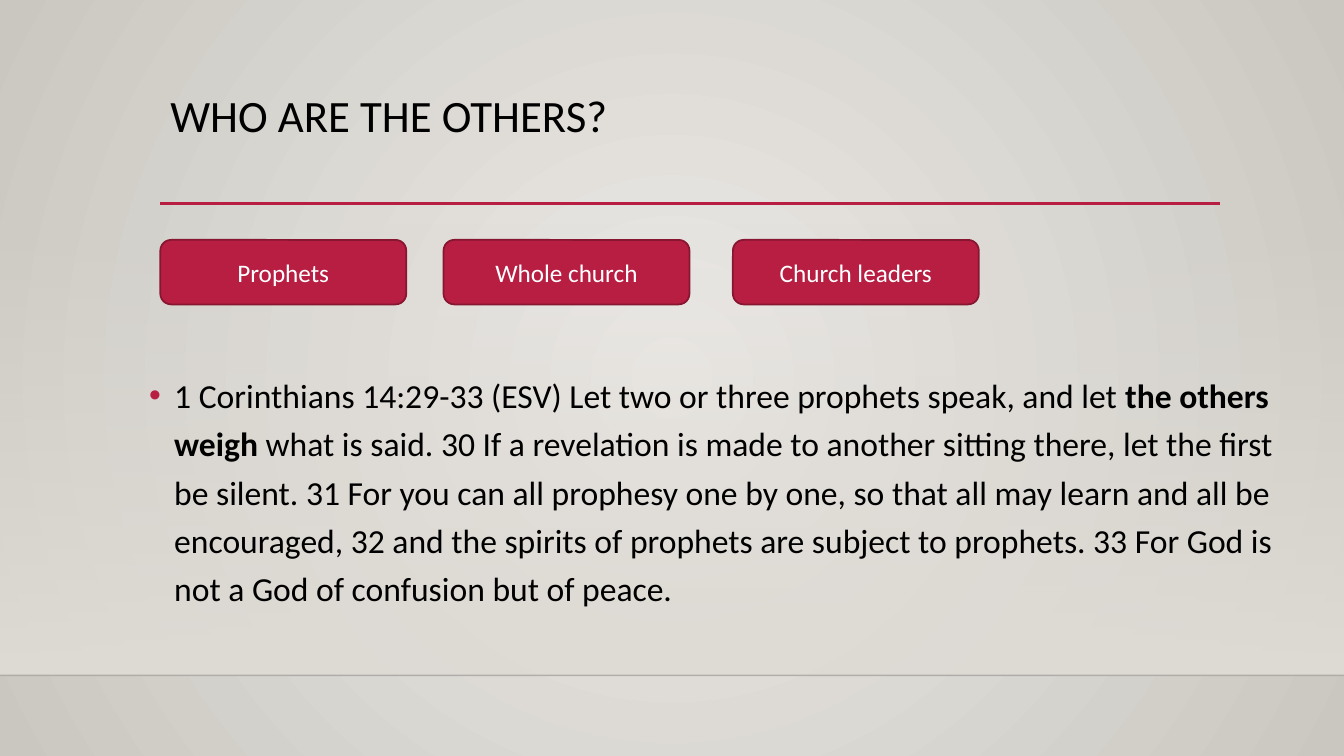
from lxml import etree
from pptx import Presentation
from pptx.dml.color import RGBColor
from pptx.enum.shapes import MSO_CONNECTOR, MSO_SHAPE
from pptx.enum.text import MSO_ANCHOR, MSO_AUTO_SIZE, PP_ALIGN
from pptx.oxml.ns import qn
from pptx.util import Inches, Pt

STRAIGHT = MSO_CONNECTOR.STRAIGHT
RECT, ROUND = MSO_SHAPE.RECTANGLE, MSO_SHAPE.ROUNDED_RECTANGLE
TOP, MIDDLE = MSO_ANCHOR.TOP, MSO_ANCHOR.MIDDLE
LEFT, CENTER = PP_ALIGN.LEFT, PP_ALIGN.CENTER
FIXED = MSO_AUTO_SIZE.NONE

RED = RGBColor(0xB7, 0x1E, 0x42)
WINE = RGBColor(0x87, 0x16, 0x31)
PALE = RGBColor(0xEC, 0xEA, 0xE7)
STONE = RGBColor(0xCA, 0xC7, 0xC1)
SAND = RGBColor(0xDF, 0xDB, 0xD5)
INK = RGBColor(0, 0, 1)
BLACK = RGBColor(0, 0, 0)
WHITE = RGBColor(255, 255, 255)

MARGIN = 11.93
FLOOR = 89.33
CHIPS = [(MARGIN, "Prophets"), (33, "Whole church"), (54.53, "Church leaders")]
VERSE = [
    ("1 Corinthians 14:29-33 (ESV) Let two or three prophets speak, and let ", False),
    ("the others weigh ", True),
    ("what is said. 30 If a revelation is made to another sitting there, let the "
     "first be silent. 31 For you can all prophesy one by one, so that all may learn "
     "and all be encouraged, 32 and the spirits of prophets are subject to prophets. "
     "33 For God is not a God of confusion but of peace.", False),
]


def add(parent, tag, **attrs):
    return etree.SubElement(parent, qn(tag), attrs)


def fade(color, share):
    """Set the opacity, in percent, of an srgbClr element."""
    add(color, "a:alpha", val=str(share * 1000))


class Deck:
    """One slide with its style; lengths are percent of the slide's size."""

    font = "Calibri"

    def __init__(self):
        self.prs = Presentation()
        self.prs.slide_width = Inches(13.333)
        self.prs.slide_height = Inches(7.5)
        self.slide = self.prs.slides.add_slide(self.prs.slide_layouts[5])
        self.shapes = self.slide.shapes

    def scale(self, x, y):
        return (round(self.prs.slide_width * x / 100),
                round(self.prs.slide_height * y / 100))

    def box(self, x, y, w, h):
        return *self.scale(x, y), *self.scale(w, h)

    def blend(self, fill, colors):
        fill.gradient()
        for stop, color in zip(fill.gradient_stops, colors):
            stop.color.rgb = color

    def backdrop(self, inner, outer):
        """Fill the background with a gradient running out from the centre."""
        fill = self.slide.background.fill
        self.blend(fill, (inner, outer))
        grad = next(self.slide.element.iter(qn("a:gradFill")))
        grad.remove(grad.find(qn("a:lin")))
        ring = add(grad, "a:path", path="circle")
        add(ring, "a:fillToRect", l="50000", t="50000", r="50000", b="50000")

    def haze(self, x, y, w, h, color):
        """Draw a panel that fades in from top to bottom."""
        panel = self.shapes.add_shape(RECT, *self.box(x, y, w, h))
        panel.shadow.inherit = False
        panel.line.fill.background()
        self.blend(panel.fill, (color, color))
        panel.fill.gradient_angle = 270
        fade(next(panel.element.iter(qn("a:srgbClr"))), 0)

    def rule(self, x, y, w, color, width, share=100):
        line = self.shapes.add_connector(
            STRAIGHT, *self.scale(x, y), *self.scale(x + w, y))
        line.line.color.rgb = color
        line.line.width = Pt(width)
        if share < 100:
            fade(next(line.element.iter(qn("a:srgbClr"))), share)
        add(line.element.spPr, "a:effectLst")

    def style(self, para, size, color, align=LEFT, lead=1.0):
        para.alignment = align
        para.line_spacing = lead
        para.font.name = self.font
        para.font.size = Pt(size)
        para.font.color.rgb = color

    def title(self, text, x, y, w, h):
        head = self.shapes.title
        head.left, head.top, head.width, head.height = self.box(x, y, w, h)
        frame = head.text_frame
        frame.text = text
        frame.auto_size = FIXED
        frame.vertical_anchor = TOP
        self.style(frame.paragraphs[0], 32, BLACK, lead=0.9)

    def chip(self, text, x, y, w, h):
        chip = self.shapes.add_shape(ROUND, *self.box(x, y, w, h))
        chip.shadow.inherit = False
        chip.fill.solid()
        chip.fill.fore_color.rgb = RED
        chip.line.color.rgb = WINE
        chip.line.width = Pt(1.25)
        chip.text_frame.text = text
        chip.text_frame.vertical_anchor = MIDDLE
        self.style(chip.text_frame.paragraphs[0], 18, WHITE, CENTER)

    def bullet(self, runs, x, y, w, h):
        frame = self.shapes.add_textbox(*self.box(x, y, w, h)).text_frame
        frame.word_wrap = True
        para = frame.paragraphs[0]
        props = para._p.get_or_add_pPr()
        indent = Inches(0.25)
        props.set("marL", str(indent))
        props.set("indent", str(-indent))
        add(add(props, "a:buClr"), "a:srgbClr", val=str(RED))
        add(props, "a:buFont", typeface="Arial")
        add(props, "a:buChar", char="•")
        self.style(para, 24, BLACK, lead=1.2)
        for text, bold in runs:
            run = para.add_run()
            run.text = text
            run.font.bold = bold


def main():
    deck = Deck()
    deck.backdrop(PALE, STONE)
    deck.haze(0, 29.47, 100, FLOOR - 29.47, SAND)
    deck.rule(0, FLOOR, 100, INK, 1, 20)
    deck.rule(MARGIN, 26.93, 78.83, RED, 2.5)
    deck.title("WHO ARE THE OTHERS?", MARGIN, 11.73, 78.75, 15.33)
    deck.bullet(VERSE, 10.35, 47.87, 85.73, 50.27)
    for x, text in CHIPS:
        deck.chip(text, x, 31.73, 18.3, 8.53)
    deck.prs.save("out.pptx")


if __name__ == "__main__":
    main()
